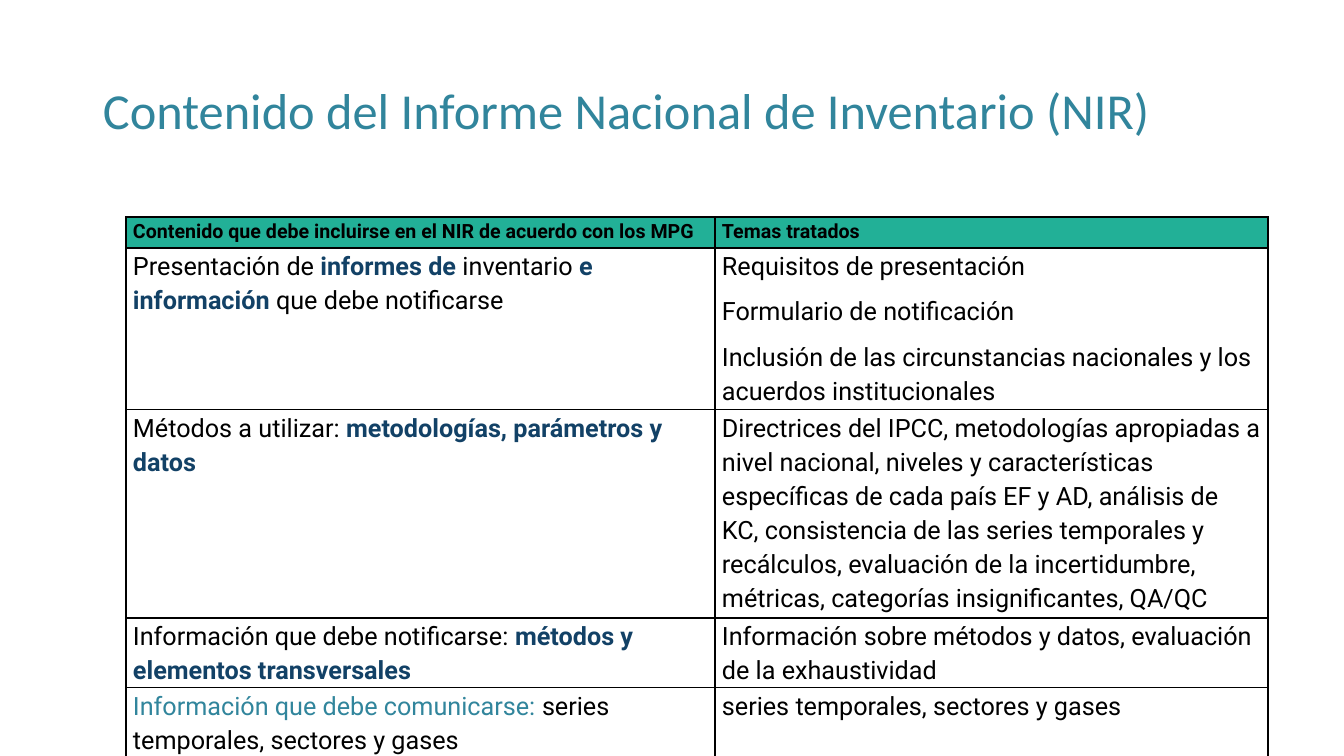
import pptx
import pptx.util
import pptx.dml.color
import pptx.enum.text
import pptx.oxml
import pptx.oxml.ns

PX_PER_INCH = 100.8
BLACK, TEAL, NAVY, GREEN = "000000", "31859C", "124166", "22B097"

TITLE = "Contenido del Informe Nacional de Inventario (NIR)"
TITLE_BOX = (93, 40, 1159, 146)

TABLE_AT = (126, 217)
COLUMN_WIDTHS = (589, 553)
ROW_HEIGHTS = (31, 127, 194, 66, 64)

# Each cell is a list of paragraphs; each paragraph is a list of (text, style).
ROWS = [
    ([[("Contenido que debe incluirse en el NIR de acuerdo con los MPG", "head")]],
     [[("Temas tratados", "head")]]),
    ([[("Presentación de ", "plain"), ("informes de", "key"), (" inventario", "plain"),
       (" e información ", "key"), ("que debe notificarse", "plain")]],
     [[("Requisitos de presentación", "plain")],
      [("Formulario de notificación", "plain")],
      [("Inclusión de las circunstancias nacionales y los acuerdos institucionales",
        "plain")]]),
    ([[("Métodos a utilizar: ", "plain"), ("metodologías, parámetros y datos", "key")]],
     [[("Directrices del IPCC, metodologías apropiadas a nivel nacional, niveles y "
        "características específicas de cada país EF y AD, análisis de KC, consistencia "
        "de las series temporales y recálculos, evaluación de la incertidumbre, "
        "métricas, categorías insignificantes, QA/QC", "plain")]]),
    ([[("Información que debe notificarse: ", "plain"),
       ("métodos y elementos transversales", "key")]],
     [[("Información sobre métodos y datos, evaluación de la exhaustividad", "plain")]]),
    ([[("Información que debe comunicarse: ", "teal"),
       ("series temporales, sectores y gases", "plain")]],
     [[("series temporales, sectores y gases", "plain")]]),
]

STYLES = {
    "title": ("Calibri", 36, False, TEAL),
    "head": ("Roboto", 14, True, BLACK),
    "plain": ("Roboto", 18, False, BLACK),
    "key": ("Roboto", 18, True, NAVY),
    "teal": ("Roboto", 18, False, TEAL),
}
TITLE_FORMAT = {"line_spacing": 0.9}
CELL_FORMAT = {"line_spacing": 1.15, "space_after": pptx.util.Pt(8)}
CELL_MARGINS = {"margin_left": 7, "margin_right": 7, "margin_top": 0, "margin_bottom": 0}


def px(n):
    return pptx.util.Emu(round(n * 914400 / PX_PER_INCH))


def rgb(color):
    return pptx.dml.color.RGBColor.from_string(color)


def write(tf, paragraphs, paragraph_format):
    for i, runs in enumerate(paragraphs):
        p = tf.add_paragraph() if i else tf.paragraphs[0]
        for name, value in paragraph_format.items():
            setattr(p, name, value)
        for text, style in runs:
            r = p.add_run()
            r.text = text
            font, size, bold, color = STYLES[style]
            r.font.name, r.font.size, r.font.bold = font, pptx.util.Pt(size), bold
            r.font.color.rgb = rgb(color)


def add_borders(cell):
    """Draw a thin black line on all four sides, ahead of the cell's fill."""
    tc_pr = cell._tc.get_or_add_tcPr()
    for i, side in enumerate(("lnL", "lnR", "lnT", "lnB")):
        tc_pr.insert(i, pptx.oxml.parse_xml(
            f'<a:{side} {pptx.oxml.ns.nsdecls("a")} w="12700"><a:solidFill>'
            f'<a:srgbClr val="{BLACK}"/></a:solidFill></a:{side}>'))


def add_title(s):
    tf = s.shapes.add_textbox(*map(px, TITLE_BOX)).text_frame
    tf.word_wrap = True
    tf.vertical_anchor = pptx.enum.text.MSO_ANCHOR.MIDDLE
    write(tf, [[(TITLE, "title")]], TITLE_FORMAT)


def add_contents(s):
    size = (sum(COLUMN_WIDTHS), sum(ROW_HEIGHTS))
    table = s.shapes.add_table(len(ROWS), len(COLUMN_WIDTHS),
                               *map(px, TABLE_AT + size)).table
    for column, width in zip(table.columns, COLUMN_WIDTHS):
        column.width = px(width)
    for i, (row, height) in enumerate(zip(table.rows, ROW_HEIGHTS)):
        row.height = px(height)
        for cell, paragraphs in zip(row.cells, ROWS[i]):
            for name, value in CELL_MARGINS.items():
                setattr(cell, name, px(value))
            if i == 0:
                cell.fill.solid()
                cell.fill.fore_color.rgb = rgb(GREEN)
            else:
                cell.fill.background()
            add_borders(cell)
            write(cell.text_frame, paragraphs, CELL_FORMAT)


def main():
    prs = pptx.Presentation()
    prs.slide_width, prs.slide_height = px(1344), px(756)
    s = prs.slides.add_slide(prs.slide_layouts[6])
    add_title(s)
    add_contents(s)
    prs.save("out.pptx")


if __name__ == "__main__":
    main()
